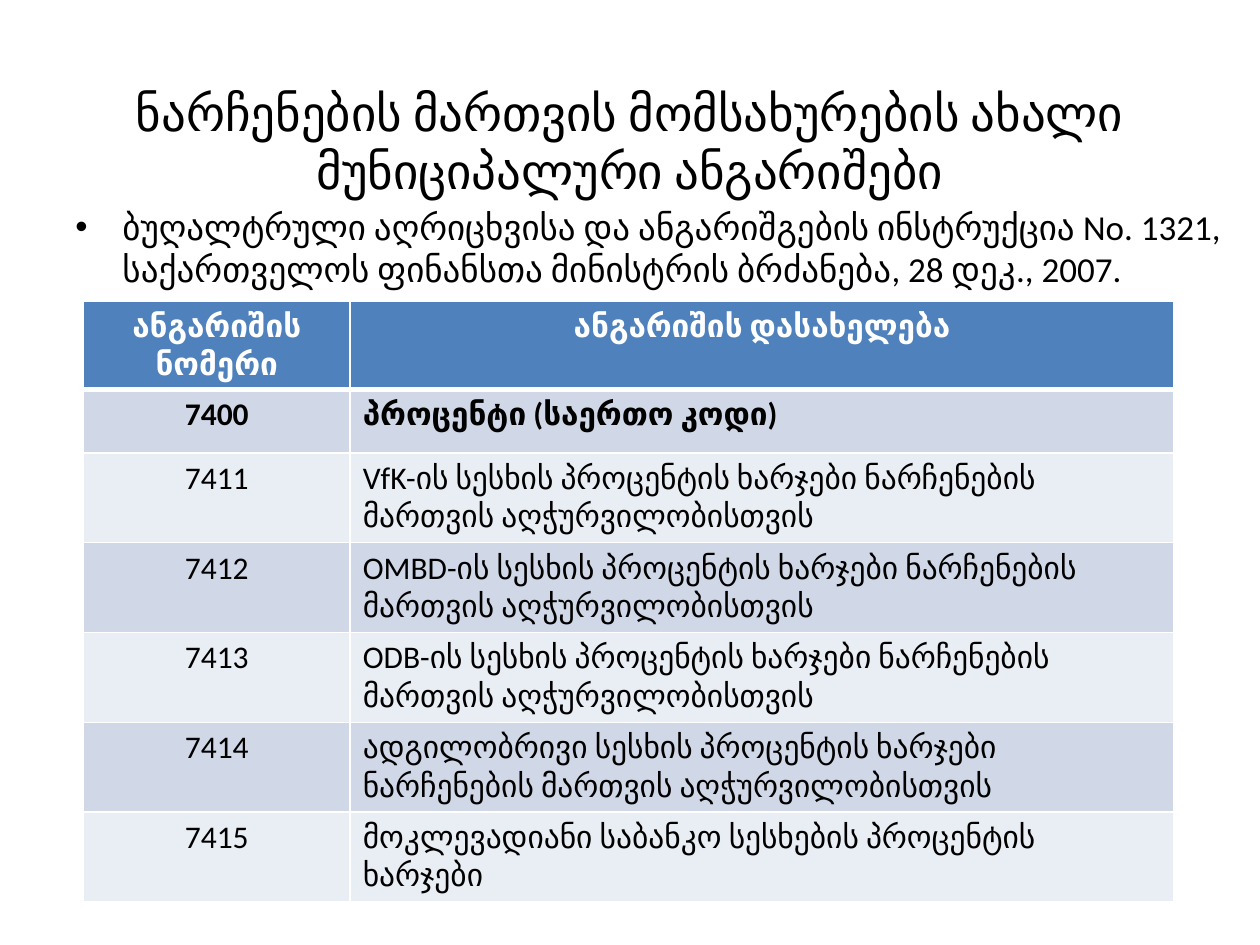
from lxml.etree import SubElement
from pptx import Presentation
from pptx.dml.color import RGBColor
from pptx.enum.text import MSO_ANCHOR as Anchor, PP_ALIGN as Align
from pptx.oxml.ns import qn
from pptx.util import Cm, Pt

COLORS = {
    "text": "000000",
    "white": "FFFFFF",
    "header": "4F81BD",
    "band_dark": "D0D8E8",
    "band_light": "E9EDF4",
}

ACCOUNTS = [
    ("ანგარიშის ნომერი", "ანგარიშის დასახელება"),
    ("7400", "პროცენტი (საერთო კოდი)"),
    ("7411", "VfK-ის სესხის პროცენტის ხარჯები ნარჩენების მართვის აღჭურვილობისთვის"),
    ("7412", "OMBD-ის სესხის პროცენტის ხარჯები ნარჩენების მართვის აღჭურვილობისთვის"),
    ("7413", "ODB-ის სესხის პროცენტის ხარჯები ნარჩენების მართვის აღჭურვილობისთვის"),
    ("7414", "ადგილობრივი სესხის პროცენტის ხარჯები ნარჩენების მართვის აღჭურვილობისთვის"),
    ("7415", "მოკლევადიანი საბანკო სესხების პროცენტის ხარჯები"),
]


class SlideBuilder:
    font = "Calibri"

    def __init__(self, slide):
        self.slide = slide

    def format(self, paragraph, size, color="text", bold=False, align=Align.LEFT):
        paragraph.alignment = align
        for run in paragraph.runs:
            run.font.name = self.font
            run.font.size = Pt(size)
            run.font.bold = bold
            run.font.color.rgb = RGBColor.from_string(COLORS[color])

    def text(self, box, content, size, align=Align.LEFT, anchor=Anchor.TOP, bullet=None):
        frame = self.slide.shapes.add_textbox(*map(Cm, box)).text_frame
        frame.word_wrap = True
        frame.vertical_anchor = anchor
        frame.text = content
        paragraph = frame.paragraphs[0]
        if bullet:
            properties = paragraph._p.get_or_add_pPr()
            properties.set("marL", str(Cm(0.95)))
            properties.set("indent", str(-Cm(0.95)))
            SubElement(properties, qn("a:buFont"), typeface="Arial")
            SubElement(properties, qn("a:buChar"), char=bullet)
        self.format(paragraph, size, align=align)

    def borders(self, cell, bottom, top):
        properties = cell._tc.get_or_add_tcPr()
        for side, width in (("L", 1), ("R", 1), ("T", top), ("B", bottom)):
            line = SubElement(properties, qn(f"a:ln{side}"), w=str(Pt(width)))
            fill = SubElement(line, qn("a:solidFill"))
            SubElement(fill, qn("a:srgbClr"), val=COLORS["white"])

    def table(self, box, rows, widths, heights, size):
        table = self.slide.shapes.add_table(len(rows), len(widths), *map(Cm, box)).table
        for column, width in zip(table.columns, widths):
            column.width = Cm(width)
        for r, (row, height) in enumerate(zip(rows, heights)):
            table.rows[r].height = Cm(height)
            header = r == 0
            band = "header" if header else "band_dark" if r % 2 else "band_light"
            for c, content in enumerate(row):
                cell = table.cell(r, c)
                self.borders(cell, bottom=3 if header else 1, top=3 if r == 1 else 1)
                cell.fill.solid()
                cell.fill.fore_color.rgb = RGBColor.from_string(COLORS[band])
                cell.text_frame.text = content
                # Header and general code are bold; names below the header align left
                self.format(cell.text_frame.paragraphs[0], size,
                            color="white" if header else "text", bold=r < 2,
                            align=Align.CENTER if header or c == 0 else Align.LEFT)


def main():
    deck = Presentation()
    deck.slide_width, deck.slide_height = Cm(25.4), Cm(19.05)
    builder = SlideBuilder(deck.slides.add_slide(deck.slide_layouts[6]))

    # Title
    builder.text((1.27, 1.75, 22.86, 2.18),
                 "ნარჩენების მართვის მომსახურების ახალი მუნიციპალური ანგარიშები",
                 28, align=Align.CENTER, anchor=Anchor.MIDDLE)

    # Legal basis, wide enough to end on its second line above the table
    builder.text((1.27, 4.01, 23.6, 1.83),
                 "ბუღალტრული აღრიცხვისა და ანგარიშგების ინსტრუქცია No. 1321, "
                 "საქართველოს ფინანსთა მინისტრის ბრძანება, 28 დეკ., 2007.",
                 20, bullet="•")

    # Accounts table: header, one-line general code, two-line accounts
    heights = [1.78, 1.28] + [1.81] * (len(ACCOUNTS) - 2)
    builder.table((1.68, 6.07, 21.99, sum(heights)), ACCOUNTS, (5.38, 16.61), heights, 18)

    deck.save("out.pptx")


if __name__ == "__main__":
    main()
